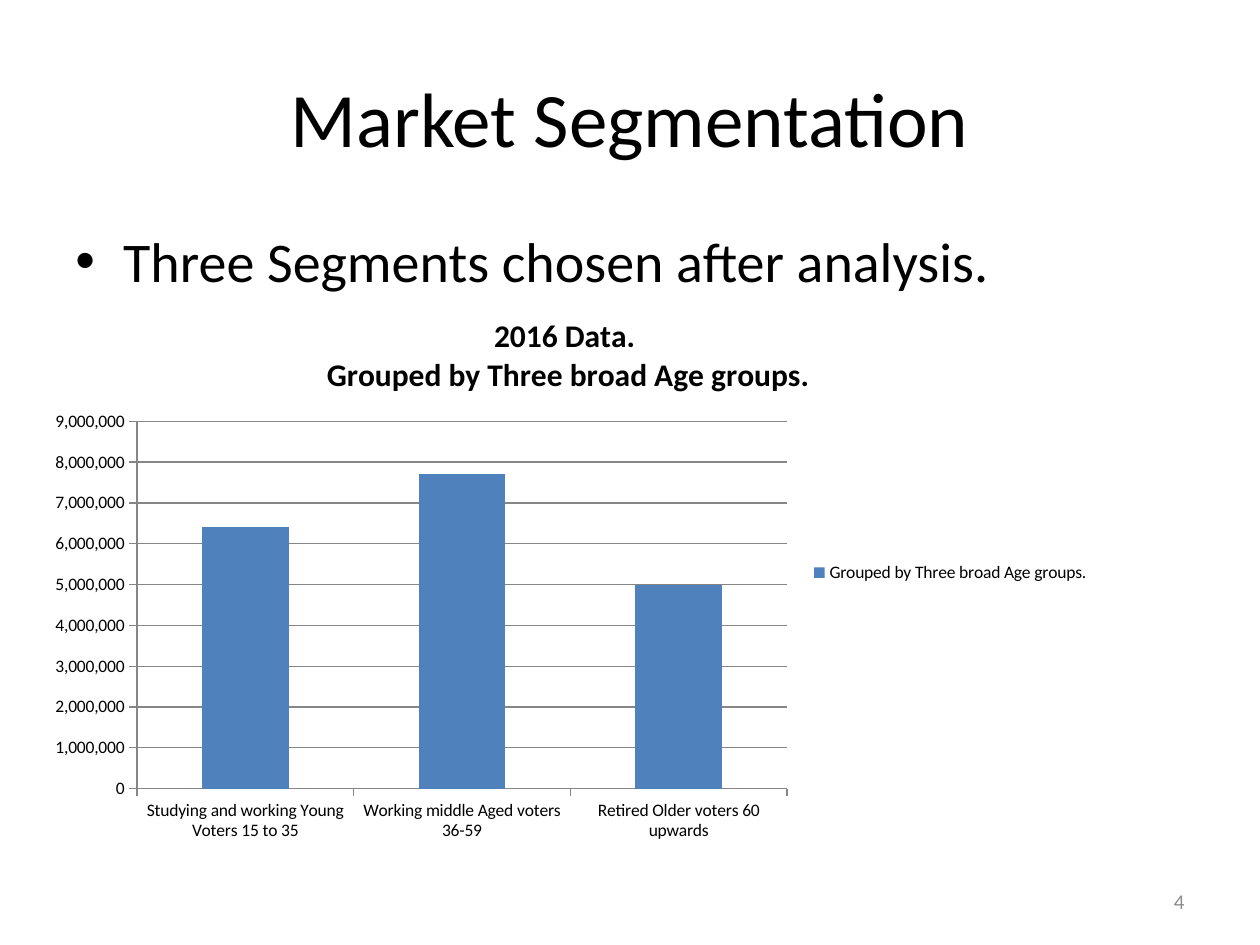
from lxml import etree
from pptx import Presentation
from pptx.chart.data import CategoryChartData
from pptx.dml.color import RGBColor
from pptx.enum.chart import XL_CHART_TYPE, XL_LEGEND_POSITION, XL_TICK_MARK
from pptx.enum.text import MSO_ANCHOR, PP_ALIGN
from pptx.oxml.ns import qn
from pptx.util import Pt

EMU_PER_PX = 9144
FONT = "Calibri"
BLACK = RGBColor(0x00, 0x00, 0x00)
GRAY = RGBColor(0x8C, 0x8C, 0x8C)
AXIS_GRAY = RGBColor(0x86, 0x86, 0x86)
BLUE = RGBColor(0x4F, 0x81, 0xBD)
COLUMN_CLUSTERED = XL_CHART_TYPE.COLUMN_CLUSTERED
LEGEND_RIGHT = XL_LEGEND_POSITION.RIGHT
TICK_OUTSIDE = XL_TICK_MARK.OUTSIDE
LEFT, CENTER, RIGHT = PP_ALIGN.LEFT, PP_ALIGN.CENTER, PP_ALIGN.RIGHT
TOP, MIDDLE = MSO_ANCHOR.TOP, MSO_ANCHOR.MIDDLE

TITLE_BOX = (50, 30, 900, 125)
BODY_BOX = (50, 175, 900, 495)
CHART_BOX = (27, 233, 848, 443)
NUMBER_BOX = (717, 695, 233, 40)

SERIES_NAME = "Grouped by Three broad Age groups."
VOTERS = {
    "Studying and working Young Voters 15 to 35": 6400000,
    "Working middle Aged voters 36-59": 7700000,
    "Retired Older voters 60 upwards": 5000000,
}


def px(length):
    """Turn a length in px into EMU."""
    return length * EMU_PER_PX


def format_font(font, size, color=BLACK, bold=False):
    """Set the typeface, size, colour and weight of a font."""
    font.name = FONT
    font.size = Pt(size)
    font.bold = bold
    font.color.rgb = color


def write_text(text_frame, text, size, color=BLACK, bold=False, align=LEFT, anchor=TOP):
    """Write text into a frame, one paragraph for each line."""
    text_frame.word_wrap = True
    text_frame.vertical_anchor = anchor
    text_frame.text = text
    for paragraph in text_frame.paragraphs:
        paragraph.alignment = align
        for run in paragraph.runs:
            format_font(run.font, size, color, bold)


def add_text(slide, box, text, **text_format):
    """Add a text box and return its frame."""
    text_frame = slide.shapes.add_textbox(*map(px, box)).text_frame
    write_text(text_frame, text, **text_format)
    return text_frame


def place_title(slide, box):
    """Place and format the title placeholder."""
    title = slide.shapes.title
    title.left, title.top, title.width, title.height = map(px, box)
    write_text(title.text_frame, "Market Segmentation", size=44, align=CENTER, anchor=MIDDLE)


def add_body(slide, box):
    """Add the bulleted statement."""
    text_frame = add_text(slide, box, "Three Segments chosen after analysis.", size=32)
    paragraph = text_frame.paragraphs[0]
    paragraph.space_before = Pt(6.4)
    properties = paragraph._p.get_or_add_pPr()
    properties.set("marL", str(px(38)))
    properties.set("indent", str(px(-38)))
    etree.SubElement(properties, qn("a:buFont"), typeface="Arial")
    etree.SubElement(properties, qn("a:buChar"), char="•")


def add_voter_chart(slide, box):
    """Add the column chart of voters by age group."""
    data = CategoryChartData(number_format="#,##0")
    data.categories = list(VOTERS)
    data.add_series(SERIES_NAME, list(VOTERS.values()))
    chart = slide.shapes.add_chart(COLUMN_CLUSTERED, *map(px, box), data).chart
    format_font(chart.font, 10)

    chart.has_title = True
    write_text(chart.chart_title.text_frame, f"2016 Data. \n{SERIES_NAME}",
               size=18, bold=True, align=CENTER)
    chart.chart_title.include_in_layout = False
    chart.has_legend = True
    chart.legend.position = LEGEND_RIGHT
    chart.legend.include_in_layout = False

    plot = chart.plots[0]
    plot.gap_width = 150
    plot.vary_by_categories = False
    fill = plot.series[0].format.fill
    fill.solid()
    fill.fore_color.rgb = BLUE

    value_axis = chart.value_axis
    value_axis.has_major_gridlines = True
    value_axis.tick_labels.number_format = "#,##0"
    value_axis.tick_labels.number_format_is_linked = False
    for axis in (chart.category_axis, value_axis):
        axis.major_tick_mark = TICK_OUTSIDE
    for lines in (chart.category_axis, value_axis, value_axis.major_gridlines):
        lines.format.line.color.rgb = AXIS_GRAY
        lines.format.line.width = Pt(0.75)


def add_slide_number(slide, box):
    """Add the slide number."""
    add_text(slide, box, "4", size=12, color=GRAY, align=RIGHT, anchor=MIDDLE)


def main():
    """Build the slide and save it."""
    presentation = Presentation()
    presentation.slide_width, presentation.slide_height = px(1000), px(750)
    slide = presentation.slides.add_slide(presentation.slide_layouts.get_by_name("Title Only"))
    place_title(slide, TITLE_BOX)
    add_body(slide, BODY_BOX)
    add_voter_chart(slide, CHART_BOX)
    add_slide_number(slide, NUMBER_BOX)
    presentation.save("out.pptx")


if __name__ == "__main__":
    main()
